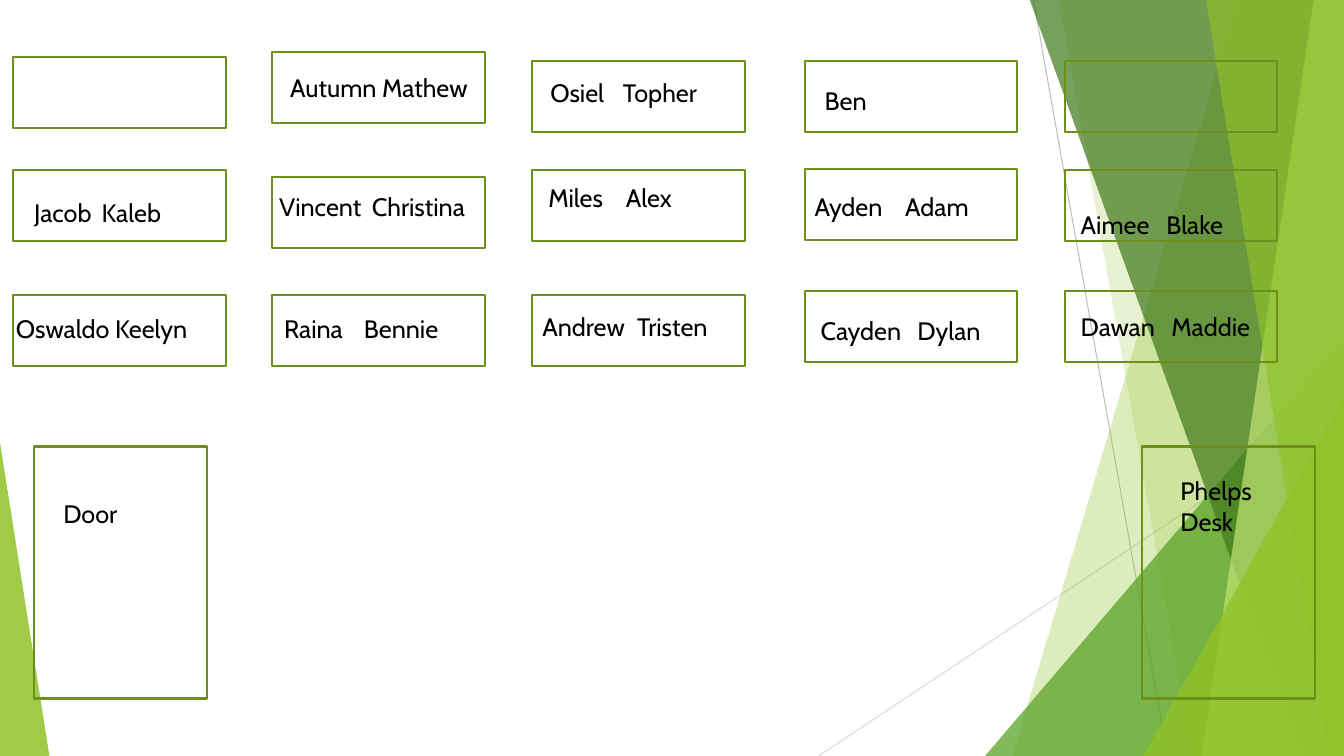
from lxml.etree import SubElement
from pptx import Presentation
from pptx.dml.color import RGBColor
from pptx.enum.shapes import MSO_CONNECTOR, MSO_SHAPE
from pptx.oxml.ns import qn
from pptx.util import Inches, Pt

COLORS = {
    "lime": "90C226", "green": "54A021", "forest": "3F7819", "pale": "C0E474",
    "outline": "6B901C", "text": "000000", "gray": "BFBFBF", "light": "D9D9D9",
}
FONT = "Cabin"
SLIDE_W, SLIDE_H = 13.33, 7.5
DESK_W, DESK_H = 2.11, 0.7

# Each column: left edge, then its desks from back row to front row.
# Each desk: top, names, text offset (x, y), text width, tab to second name.
COLUMNS = [
    (0.13, [(0.57, None),
            (1.69, "Jacob\tKaleb", 0.11, 0.22, 1.98, 0.67),
            (2.93, "Oswaldo Keelyn", -0.07, 0.13, 1.98, None)]),
    (2.70, [(0.52, "Autumn Mathew", 0.08, 0.15, 2.13, None),
            (1.76, "Vincent\tChristina", -0.03, 0.09, 2.5, 0.92),
            (2.93, "Raina\tBennie", 0.02, 0.13, 2.26, 0.79)]),
    (5.28, [(0.61, "Osiel\tTopher", 0.08, 0.11, 1.98, 0.72),
            (1.69, "Miles\tAlex", 0.06, 0.07, 1.98, 0.77),
            (2.93, "Andrew\tTristen", 0, 0.11, 1.98, 0.94)]),
    (7.98, [(0.61, "Ben", 0.1, 0.19, 1.98, None),
            (1.68, "Ayden\tAdam", 0, 0.17, 2.18, 0.9),
            (2.89, "Cayden\tDylan", 0.06, 0.19, 1.99, 0.96)]),
    (10.56, [(0.61, None),
             (1.69, "Aimee\tBlake", 0.06, 0.34, 1.98, 0.85),
             (2.89, "Dawan\tMaddie", 0.06, 0.15, 1.98, 0.9)]),
]


def set_fill(sp, color, alpha):
    """Translucent fill with no outline; alpha is a percentage."""
    sp.shadow.inherit = False
    sp.fill.solid()
    sp.fill.fore_color.rgb = RGBColor.from_string(COLORS[color])
    clr = sp.fill._xPr.find(qn("a:solidFill"))[0]
    SubElement(clr, qn("a:alpha")).set("val", str(alpha * 1000))
    sp.line.fill.background()


def add_line(slide, start, end, color):
    line = slide.shapes.add_connector(
        MSO_CONNECTOR.STRAIGHT, *map(Inches, (*start, *end)))
    line.line.color.rgb = RGBColor.from_string(COLORS[color])
    line.line.width = Pt(0.75)
    SubElement(line._element.spPr, qn("a:effectLst"))


def add_shard(slide, top_x, bottom_x, color, alpha):
    """Band from a slanted left side to the right edge of the slide."""
    top = -0.01
    points = [(SLIDE_W, top), (SLIDE_W, SLIDE_H), (bottom_x, SLIDE_H)]
    builder = slide.shapes.build_freeform(Inches(top_x), Inches(top))
    builder.add_line_segments([(Inches(x), Inches(y)) for x, y in points])
    set_fill(builder.convert_to_shape(), color, alpha)


def add_corner(slide, x, y, w, apex, color, alpha):
    """Triangle that stands on the bottom edge of the slide."""
    sp = slide.shapes.add_shape(
        MSO_SHAPE.ISOSCELES_TRIANGLE, *map(Inches, (x, y, w, SLIDE_H - y)))
    sp.adjustments[0] = apex
    set_fill(sp, color, alpha)


def add_box(slide, x, y, w, h):
    sp = slide.shapes.add_shape(MSO_SHAPE.RECTANGLE, *map(Inches, (x, y, w, h)))
    sp.shadow.inherit = False
    sp.fill.background()
    sp.line.color.rgb = RGBColor.from_string(COLORS["outline"])
    sp.line.width = Pt(1.5)


def add_text(slide, text, x, y, w, h=0.4, tab=None, size=18, color="text"):
    tf = slide.shapes.add_textbox(*map(Inches, (x, y, w, h))).text_frame
    tf.word_wrap = True
    tf.text = text
    for p in tf.paragraphs:
        p.font.size = Pt(size)
        p.font.name = FONT
        p.font.color.rgb = RGBColor.from_string(COLORS[color])
        if tab:
            stops = p._p.get_or_add_pPr()
            tab_list = stops.makeelement(qn("a:tabLst"), {})
            stops.insert(0, tab_list)
            SubElement(tab_list, qn("a:tab"), pos=str(Inches(tab)), algn="l")


def draw_backdrop(slide):
    add_line(slide, (10.25, 0), (11.58, SLIDE_H), "gray")
    add_line(slide, (SLIDE_W, 4.03), (8.12, SLIDE_H), "light")
    add_shard(slide, 12.28, 10.04, "lime", 30)
    add_shard(slide, 10.5, 11.83, "lime", 20)
    add_corner(slide, 9.77, 3.33, 3.56, 1, "green", 72)
    add_shard(slide, 10.21, 12.91, "forest", 70)
    add_shard(slide, 13.03, 11.92, "pale", 70)
    add_shard(slide, 11.96, 13.18, "lime", 65)
    add_corner(slide, 11.34, 3.93, 1.99, 1, "lime", 80)
    add_corner(slide, 0, 4.39, 0.49, 0, "lime", 85)


def draw_desk(slide, x, y, names, dx=0, dy=0, w=0, tab=None):
    add_box(slide, x, y, DESK_W, DESK_H)
    if names:
        add_text(slide, names, x + dx, y + dy, w, tab=tab)


def draw_landmark(slide, x, y, label, dx, dy, h):
    """Tall box for the door or the teacher's desk."""
    add_box(slide, x, y, 1.71, 2.5)
    add_text(slide, label, x + dx, y + dy, 1.06, h)


def main():
    prs = Presentation()
    prs.slide_width, prs.slide_height = Inches(SLIDE_W), Inches(SLIDE_H)
    slide = prs.slides.add_slide(prs.slide_layouts[6])
    draw_backdrop(slide)
    # Student desks
    for x, desks in COLUMNS:
        for desk in desks:
            draw_desk(slide, x, *desk)
    # Front of the room
    draw_landmark(slide, 11.33, 4.43, "Phelps\nDesk", 0.28, 0.24, 0.71)
    draw_landmark(slide, 0.34, 4.43, "Door", 0.19, 0.46, 0.4)
    prs.save("out.pptx")


if __name__ == "__main__":
    main()
